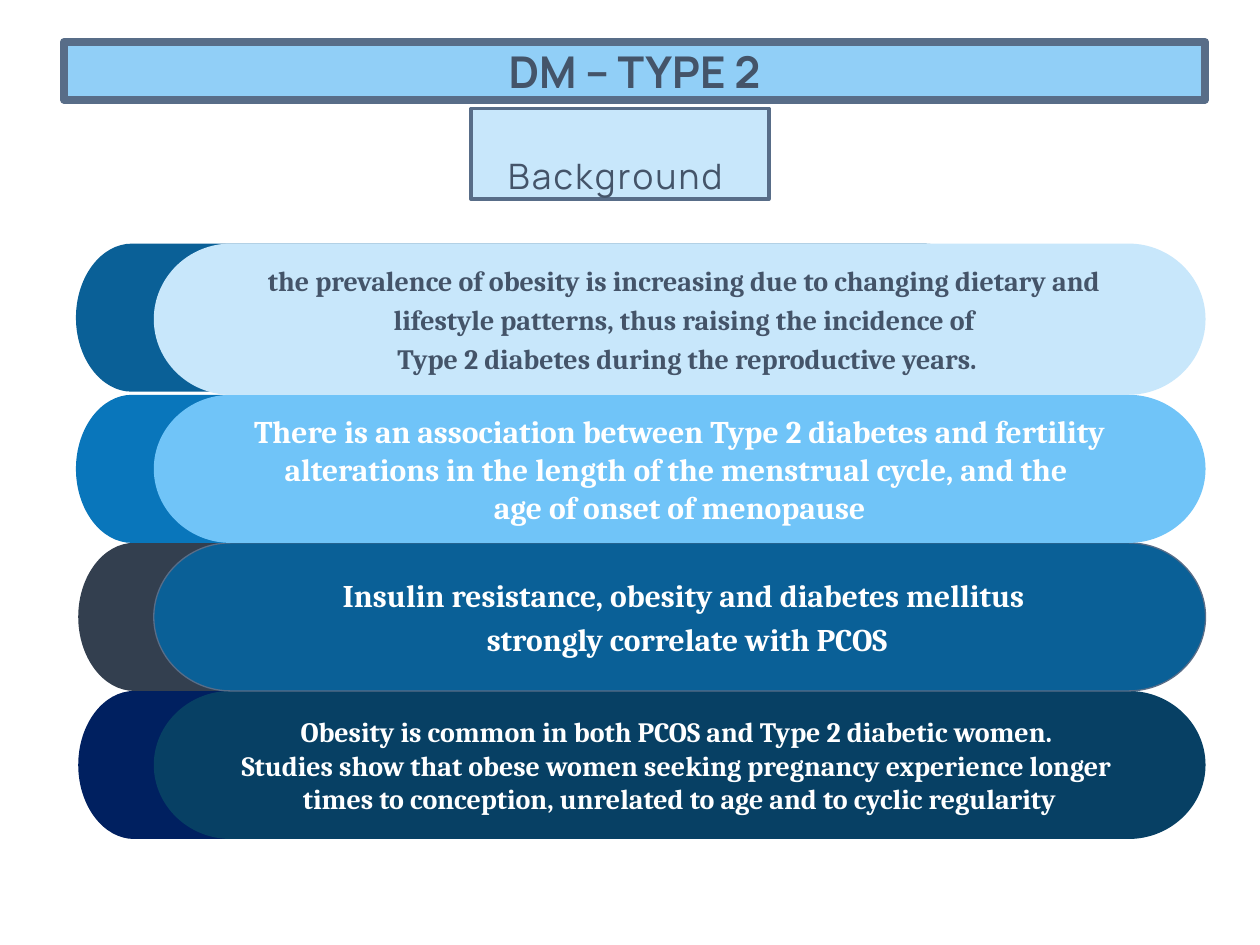
from dataclasses import dataclass

from lxml.etree import SubElement
from pptx import Presentation
from pptx.dml.color import RGBColor
from pptx.enum.shapes import MSO_SHAPE
from pptx.enum.text import MSO_ANCHOR as Anchor, MSO_AUTO_SIZE as AutoSize, PP_ALIGN as Align
from pptx.oxml.ns import qn
from pptx.util import Pt

EDGE, INK, PALE = "586D88", "445469", "C8E7FB"
KAPPA = 0.55  # control distance that makes a cubic curve a quarter ellipse


@dataclass
class Band:
    top: float
    height: float
    tab_left: float
    tab_fill: str
    fill: str
    lines: list[str]
    size: float = 16
    color: str = "FFFFFF"
    spaced: bool = False
    line_width: float = 0


BANDS = [
    Band(139.2, 86.4, 43.4, "0A6097", PALE, [
        "the prevalence of obesity is increasing due to changing dietary and ",
        "lifestyle patterns, thus raising the incidence of ",
        "Type 2 diabetes during the reproductive years."], color=INK, spaced=True),
    Band(225.6, 84.6, 43.4, "0976BB", "70C4F8", [
        "There is an association between Type 2 diabetes and fertility",
        "alterations in the length of the menstrual cycle, and the ",
        "age of onset of menopause"], size=18),
    Band(310.2, 84.6, 44.7, "333F4F", "0A6097", [
        "Insulin resistance, obesity and diabetes mellitus ",
        "strongly correlate with PCOS"], size=18, spaced=True, line_width=0.75),
    Band(394.8, 84.6, 44.7, "002060", "074064", [
        "Obesity is common in both PCOS and Type 2 diabetic women. ",
        "Studies show that obese women seeking pregnancy experience longer ",
        "times to conception, unrelated to age and to cyclic regularity"]),
]


def rgb(value: str) -> RGBColor:
    return RGBColor.from_string(value)


def paint(sp, fill: str, line_width: float = 0) -> None:
    sp.fill.solid()
    sp.fill.fore_color.rgb = rgb(fill)
    if line_width:
        sp.line.color.rgb = rgb(EDGE)
        sp.line.width = Pt(line_width)
    else:
        sp.line.fill.background()


def round_corner(segment, start: tuple, corner: tuple, end: tuple) -> None:
    """Turn a straight segment into a quarter ellipse that bulges to the corner."""
    segment.tag = qn("a:cubicBezTo")
    segment.remove(segment[0])
    near_start, near_end = ([a + KAPPA * (c - a) for a, c in zip(point, corner)]
                            for point in (start, end))
    for x, y in (near_start, near_end, end):
        SubElement(segment, qn("a:pt"), x=str(round(x)), y=str(round(y)))


def add_stadium(s, left: float, top: float, width: float, height: float, rx: float):
    """Bar whose two ends are half ellipses of horizontal radius rx."""
    w, h, r = Pt(width), Pt(height), Pt(rx)
    points = [(w - r, h), (r, h), (0, h // 2), (r, 0), (w - r, 0), (w, h // 2), (w - r, h)]
    corners = {2: (0, h), 3: (0, 0), 5: (w, 0), 6: (w, h)}
    builder = s.shapes.build_freeform(*points[0])
    builder.add_line_segments(points[1:], close=True)
    sp = builder.convert_to_shape(Pt(left), Pt(top))
    segments = list(sp._element.iter(qn("a:lnTo")))
    for i, corner in corners.items():
        round_corner(segments[i - 1], points[i - 1], corner, points[i])
    sp.shadow.inherit = False
    return sp


def write(sp, lines: list[str], font: str, size: float, color: str, bold: bool,
          anchor: Anchor = Anchor.MIDDLE, wrap: bool = True) -> None:
    tf = sp.text_frame
    tf.auto_size = AutoSize.NONE
    tf.word_wrap = wrap
    tf.vertical_anchor = anchor
    tf.margin_left = tf.margin_right = Pt(2.9)
    tf.margin_top = tf.margin_bottom = Pt(1.4)
    for i, line in enumerate(lines):
        p = tf.add_paragraph() if i else tf.paragraphs[0]
        p.alignment = Align.CENTER
        r = p.add_run()
        r.text = line
        r.font.name, r.font.size, r.font.bold = font, Pt(size), bold
        r.font.color.rgb = rgb(color)


def add_band(s, band: Band) -> None:
    tab = add_stadium(s, band.tab_left, band.top, 517, 84.6, 32)
    paint(tab, band.tab_fill)
    bar = add_stadium(s, 87.9, band.top, 601, band.height, 44)
    paint(bar, band.fill, band.line_width)
    write(bar, band.lines, "Cambria", band.size, band.color, True, wrap=False)
    if band.spaced:
        for p in bar.text_frame.paragraphs:
            p.space_before = Pt(3)
            p._p.get_or_add_pPr().set("marL", str(Pt(8.6)))


def add_title(s) -> None:
    title = s.shapes.title
    title.left, title.top, title.width, title.height = Pt(36.6), Pt(24), Pt(652), Pt(33)
    paint(title, "91CFF7", 4.5)
    write(title, ["DM – TYPE 2"], "Manrope", 25, INK, True)


def add_subtitle(s) -> None:
    sp = s.shapes.add_shape(MSO_SHAPE.RECTANGLE, Pt(269.3), Pt(62), Pt(170), Pt(51.8))
    sp.shadow.inherit = False
    paint(sp, PALE, 2.25)
    write(sp, ["Background "], "Manrope", 20, INK, False, Anchor.BOTTOM)
    sp.text_frame.paragraphs[0].runs[0].font._element.set("spc", "130")


def main() -> None:
    prs = Presentation()
    prs.slide_width, prs.slide_height = Pt(720), Pt(540)
    s = prs.slides.add_slide(prs.slide_layouts[5])
    for band in reversed(BANDS):
        add_band(s, band)
    add_title(s)
    add_subtitle(s)
    prs.save("out.pptx")


if __name__ == "__main__":
    main()
